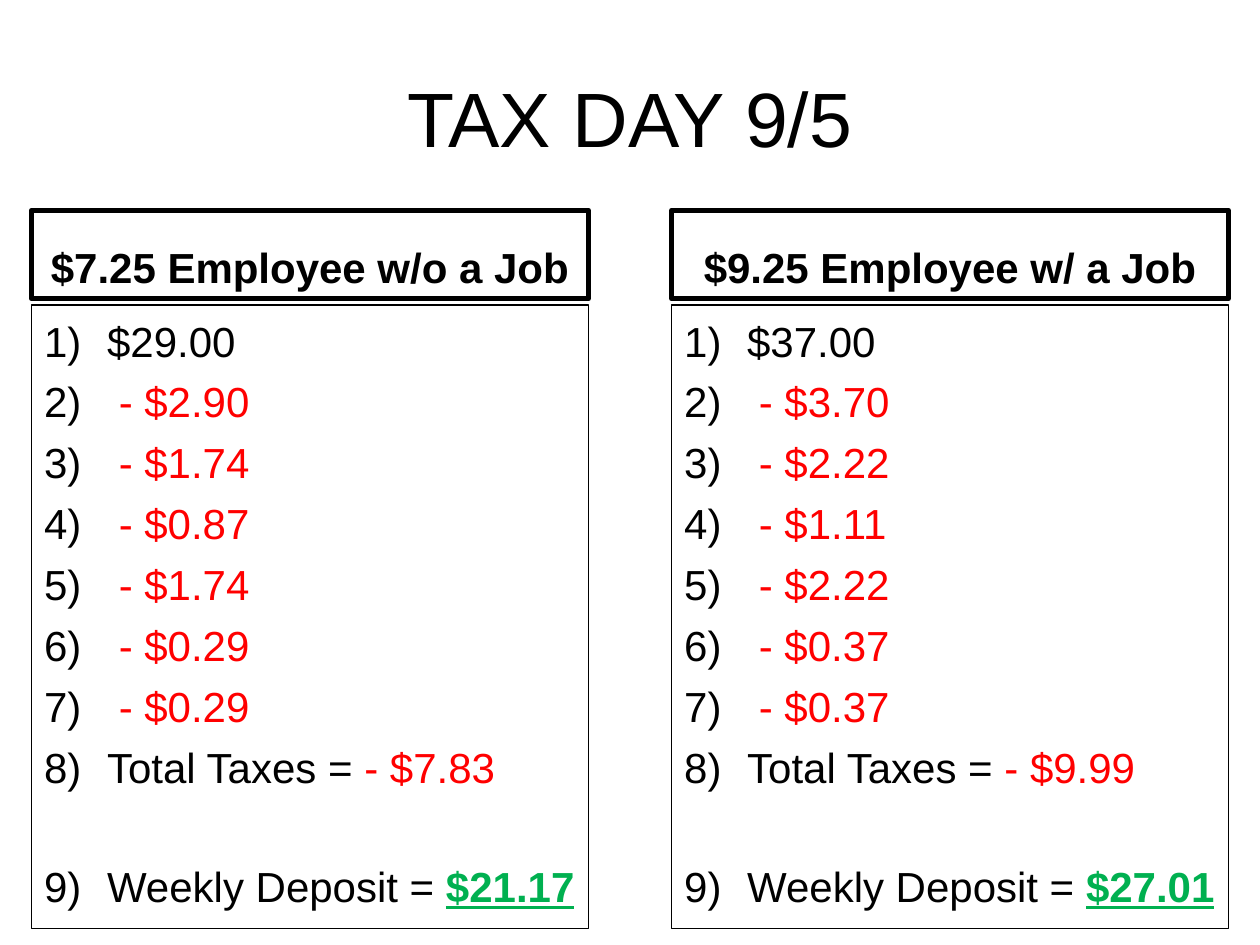
from dataclasses import dataclass

from lxml import etree
from pptx import Presentation
from pptx import util as u
from pptx.dml.color import RGBColor
from pptx.enum import text
from pptx.oxml.ns import qn


@dataclass(frozen=True)
class Theme:
    font: str = "Arial"
    ink: RGBColor = RGBColor(0, 0, 0)
    tax: RGBColor = RGBColor(0xFF, 0, 0)
    deposit: RGBColor = RGBColor(0, 0xB0, 0x50)
    title_size: int = 44
    body_size: int = 24
    item_gap: int = 6
    deposit_gap: float = 39.5


THEME = Theme()
TITLE = "TAX DAY 9/5"
EMPLOYEES = [
    {
        "heading": "$7.25 Employee w/o a Job",
        "gross": "$29.00",
        "taxes": ["$2.90", "$1.74", "$0.87", "$1.74", "$0.29", "$0.29"],
        "total": "$7.83",
        "deposit": "$21.17",
    },
    {
        "heading": "$9.25 Employee w/ a Job",
        "gross": "$37.00",
        "taxes": ["$3.70", "$2.22", "$1.11", "$2.22", "$0.37", "$0.37"],
        "total": "$9.99",
        "deposit": "$27.01",
    },
]
SLIDE_WIDTH, SLIDE_HEIGHT = 10, 7.5
MARGIN, COLUMN_WIDTH = 0.25, 4.42
HEADING_TOP, HEADING_HEIGHT = 1.67, 0.7
LIST_TOP, LIST_HEIGHT = 2.42, 4.95


def place(box, left, top, width, height, anchor):
    box.left, box.top = u.Inches(left), u.Inches(top)
    box.width, box.height = u.Inches(width), u.Inches(height)
    box.text_frame.word_wrap = True
    box.text_frame.auto_size = text.MSO_AUTO_SIZE.NONE
    box.text_frame.vertical_anchor = anchor


def outline(box, points):
    box.line.color.rgb = THEME.ink
    box.line.width = u.Pt(points)


def style(para, size, bold=False, align=text.PP_ALIGN.LEFT):
    para.alignment = align
    para.font.name = THEME.font
    para.font.size = u.Pt(size)
    para.font.bold = bold
    para.font.color.rgb = THEME.ink


def number(para):
    props = para._p.get_or_add_pPr()
    props.set("marL", str(u.Inches(0.5)))
    props.set("indent", str(-u.Inches(0.5)))
    etree.SubElement(props, qn("a:buFont"), typeface="+mj-lt")
    etree.SubElement(props, qn("a:buAutoNum"), type="arabicParenR")


def add_item(para, label, amount, color, gap, strong=False):
    number(para)
    style(para, THEME.body_size)
    para.space_before = u.Pt(gap)
    para.add_run().text = label
    if amount:
        span = para.add_run()
        span.text = amount
        span.font.color.rgb = color
        if strong:
            span.font.bold = span.font.underline = True


def fill_list(frame, employee):
    frame.margin_top = u.Inches(0.08)
    add_item(frame.paragraphs[0], employee["gross"], "", THEME.ink, 0)
    taxes = [(" ", amount) for amount in employee["taxes"]]
    for label, amount in taxes + [("Total Taxes = ", employee["total"])]:
        add_item(frame.add_paragraph(), label, f"- {amount}", THEME.tax, THEME.item_gap)
    add_item(frame.add_paragraph(), "Weekly Deposit = ", employee["deposit"],
             THEME.deposit, THEME.deposit_gap, strong=True)


def main():
    deck = Presentation()
    deck.slide_width, deck.slide_height = u.Inches(SLIDE_WIDTH), u.Inches(SLIDE_HEIGHT)
    page = deck.slides.add_slide(deck.slide_layouts.get_by_name("Comparison"))

    title, *bodies = page.placeholders
    place(title, 0.5, 0.3, 9, 1.25, text.MSO_ANCHOR.MIDDLE)
    title.text_frame.text = TITLE
    style(title.text_frame.paragraphs[0], THEME.title_size, align=text.PP_ALIGN.CENTER)

    lefts = [MARGIN, SLIDE_WIDTH - MARGIN - COLUMN_WIDTH]
    for employee, left, heading, amounts in zip(EMPLOYEES, lefts, bodies[::2], bodies[1::2]):
        place(heading, left, HEADING_TOP, COLUMN_WIDTH, HEADING_HEIGHT, text.MSO_ANCHOR.BOTTOM)
        outline(heading, 3)
        heading.text_frame.text = employee["heading"]
        para = heading.text_frame.paragraphs[0]
        style(para, THEME.body_size, bold=True, align=text.PP_ALIGN.CENTER)
        para.space_before = u.Pt(0)

        place(amounts, left, LIST_TOP, COLUMN_WIDTH, LIST_HEIGHT, text.MSO_ANCHOR.TOP)
        outline(amounts, 0.75)
        fill_list(amounts.text_frame, employee)

    deck.save("out.pptx")


if __name__ == "__main__":
    main()
